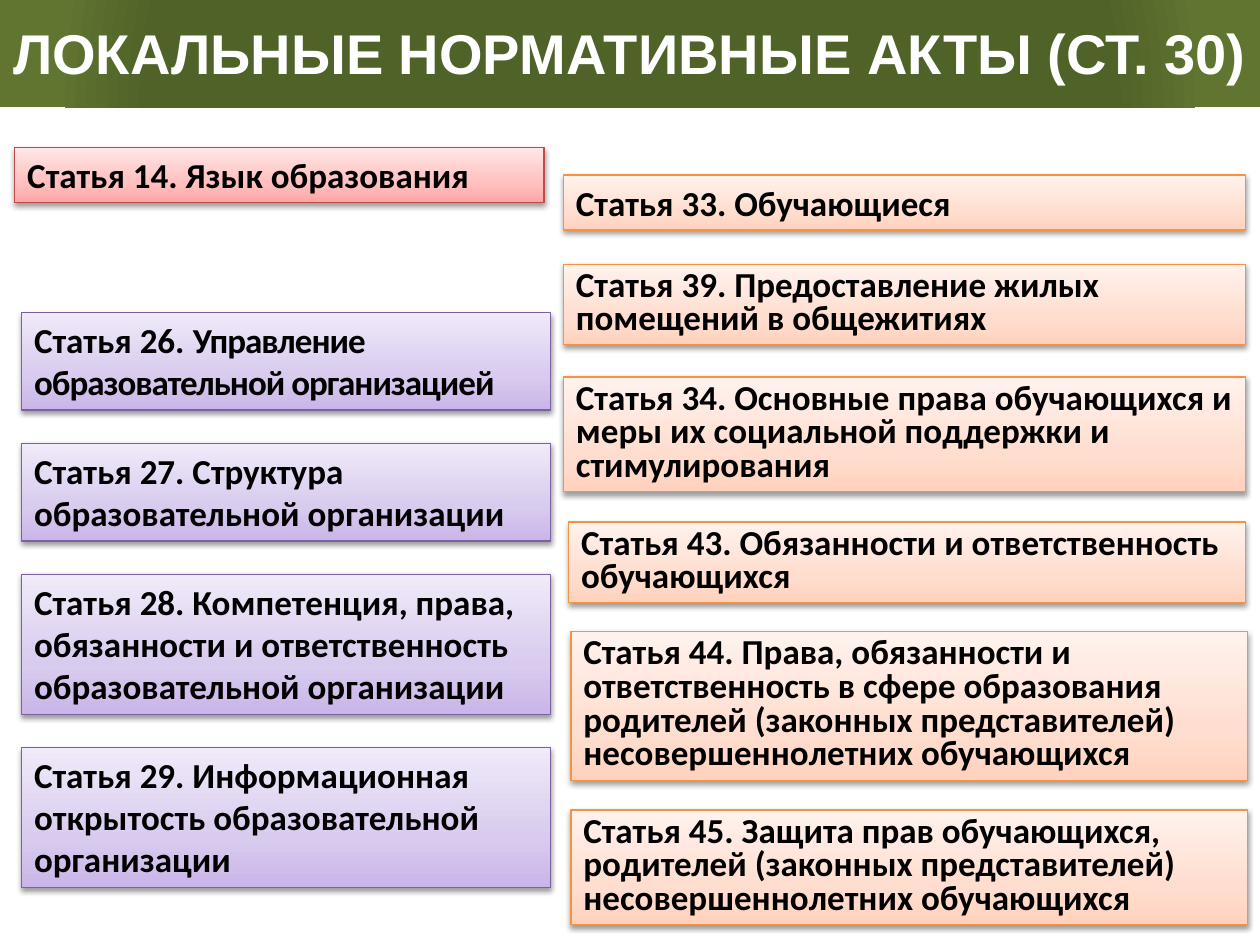
from lxml.etree import SubElement
from pptx import Presentation
from pptx.dml.color import RGBColor
from pptx.enum.shapes import MSO_SHAPE as Shape
from pptx.enum.text import MSO_ANCHOR as Anchor, MSO_AUTO_SIZE as AutoSize, PP_ALIGN as Align
from pptx.oxml.ns import qn
from pptx.util import Pt

TITLE = "ЛОКАЛЬНЫЕ НОРМАТИВНЫЕ АКТЫ (СТ. 30)"
TITLE_STOPS = [(76, "4F6228"), (91, "5F7530")]

# Outline colour, then gradient stops from bottom to top
RED = ("BF4C48", [(0, "FFA6A5"), (35, "FFC0BF"), (100, "FFE7E7")])
PURPLE = ("7D60A0", [(0, "C9B5E8"), (35, "D8CBEE"), (100, "F0EAF9")])
ORANGE = ("F69240", [(0, "FFD2BD"), (35, "FFDED0"), (100, "FFF2ED")])

LINE_HEIGHT = 24.3
PADDING = 7.2

# Theme, left, width, line spacing, then articles: top, number of lines, text
GROUPS = [
    (RED, 8.5, 302.4, 1, [(84.2, 1, "Статья 14. Язык образования")]),
    (PURPLE, 12.4, 302.2, 1, [
        (178.5, 2, "Статья 26. |Управление образовательной организацией"),
        (253.3, 2, "Статья 27. Структура образовательной организации"),
        (328.2, 3, "Статья 28. Компетенция, права, обязанности и ответственность "
                   "образовательной организации"),
        (427.1, 3, "Статья 29. Информационная открытость образовательной организации"),
    ]),
    (ORANGE, 322, 389.8, 1, [(100, 1, "Статья 33. Обучающиеся")]),
    (ORANGE, 322, 389.8, 0.8, [
        (151, 2, "Статья 39. Предоставление жилых помещений в общежитиях"),
        (215.5, 3, "Статья 34. Основные права обучающихся и меры их социальной "
                   "поддержки и стимулирования"),
    ]),
    (ORANGE, 325, 386.8, 0.8, [
        (298.3, 2, "Статья 43. Обязанности и ответственность обучающихся"),
    ]),
    (ORANGE, 326.2, 386.8, 0.8, [
        (361, 4, "Статья 44. Права, обязанности и ответственность в сфере образования "
                 "родителей (законных представителей) несовершеннолетних обучающихся"),
        (462.8, 3, "Статья 45. Защита прав обучающихся, родителей (законных "
                   "представителей) несовершеннолетних обучающихся"),
    ]),
]


def rgb(colour):
    return RGBColor.from_string(colour)


def add_gradient(shape, stops):
    """Append a gradient fill and return it, ready for its direction."""
    gradient = SubElement(shape.element.spPr, qn("a:gradFill"), rotWithShape="1")
    stop_list = SubElement(gradient, qn("a:gsLst"))
    for position, colour in stops:
        stop = SubElement(stop_list, qn("a:gs"), pos=str(position * 1000))
        SubElement(stop, qn("a:srgbClr"), val=colour)
    return gradient


def add_shadow(shape):
    shape.shadow.inherit = False
    effects = shape.element.spPr.find(qn("a:effectLst"))
    shadow = SubElement(effects, qn("a:outerShdw"), blurRad=str(Pt(3.1)),
                        dist=str(Pt(1.6)), dir="5400000", rotWithShape="0")
    black = SubElement(shadow, qn("a:srgbClr"), val="000000")
    SubElement(black, qn("a:alpha"), val="38000")


def format_paragraph(para, font_name, size, colour, align):
    para.alignment = align
    para.font.name = font_name
    para.font.size = Pt(size)
    para.font.bold = True
    para.font.color.rgb = rgb(colour)


def place_title(page):
    title = page.shapes.title
    title.left, title.top, title.width, title.height = Pt(0), Pt(-2), Pt(720), Pt(63.2)
    gradient = add_gradient(title, TITLE_STOPS)
    circle = SubElement(gradient, qn("a:path"), path="circle")
    SubElement(circle, qn("a:fillToRect"), l="50000", t="130000", r="50000", b="-30000")
    frame = title.text_frame
    frame.text = TITLE
    frame.auto_size = AutoSize.NONE
    frame.vertical_anchor = Anchor.MIDDLE
    format_paragraph(frame.paragraphs[0], "Arial", 32, "FFFFFF", Align.CENTER)


def add_article(page, theme, left, top, width, lines, spacing, text):
    """Add an article box; the words after a bar are set tighter."""
    outline, stops = theme
    height = PADDING + LINE_HEIGHT * spacing * lines
    box = page.shapes.add_shape(Shape.RECTANGLE, Pt(left), Pt(top), Pt(width), Pt(height))
    gradient = add_gradient(box, stops)
    SubElement(gradient, qn("a:lin"), ang="16200000", scaled="1")
    box.line.color.rgb = rgb(outline)
    box.line.width = Pt(0.75)
    add_shadow(box)
    frame = box.text_frame
    frame.word_wrap = True
    frame.auto_size = AutoSize.SHAPE_TO_FIT_TEXT
    frame.vertical_anchor = Anchor.TOP
    para = frame.paragraphs[0]
    para.line_spacing = float(spacing)
    format_paragraph(para, "Calibri", 20, "000000", Align.LEFT)
    for index, part in enumerate(text.split("|")):
        span = para.add_run()
        span.text = part
        if index:
            span._r.get_or_add_rPr().set("spc", "-60")


def main():
    deck = Presentation()
    deck.slide_width, deck.slide_height = Pt(720), Pt(540)
    page = deck.slides.add_slide(deck.slide_layouts[5])
    place_title(page)
    for theme, left, width, spacing, articles in GROUPS:
        for top, lines, text in articles:
            add_article(page, theme, left, top, width, lines, spacing, text)
    deck.save("out.pptx")


if __name__ == "__main__":
    main()
